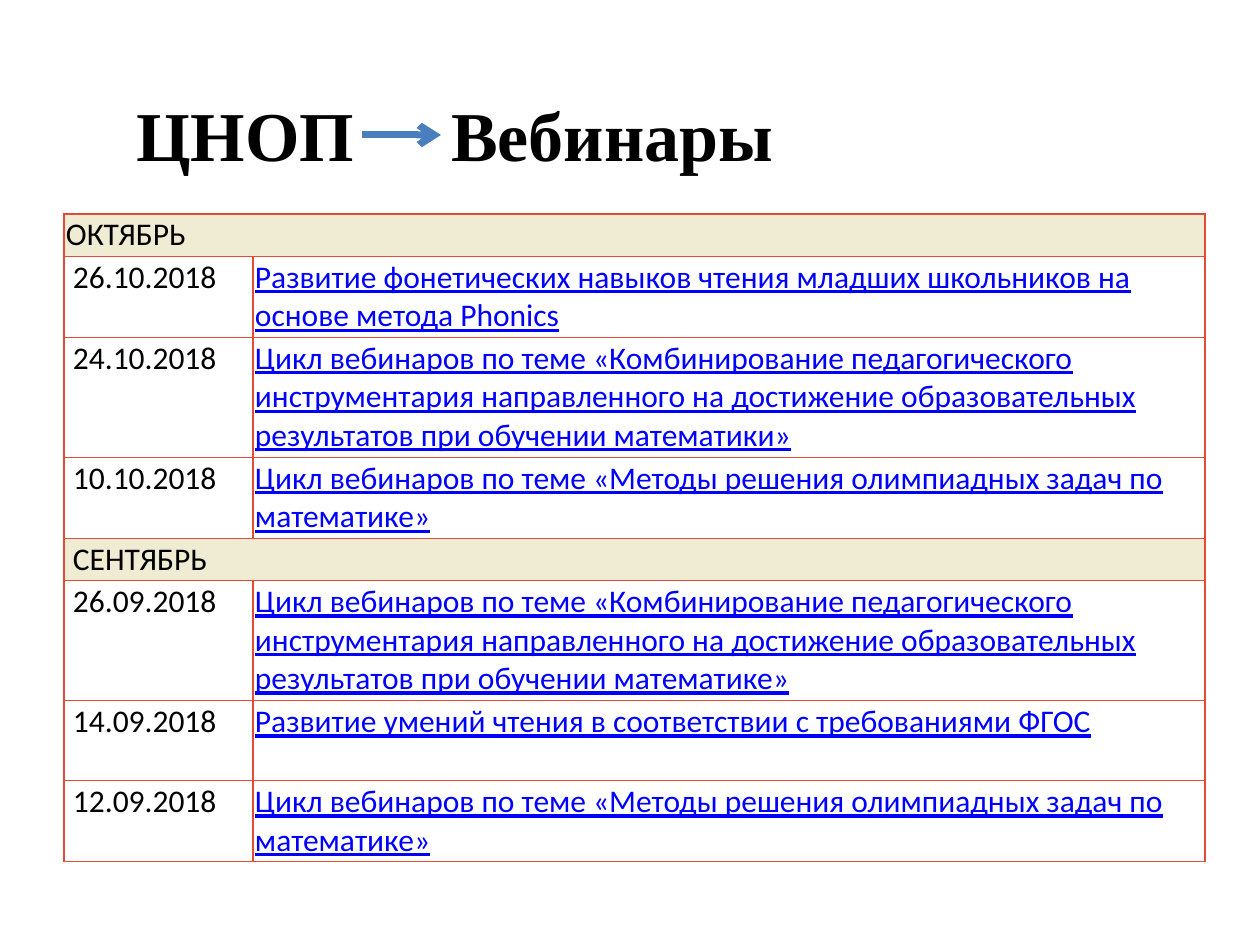
import pptx
import pptx.dml.color
import pptx.enum.shapes
import pptx.enum.text
import pptx.oxml
import pptx.oxml.ns
import pptx.util

RGBColor = pptx.dml.color.RGBColor
BLACK = RGBColor(0x00, 0x00, 0x00)
WHITE = RGBColor(0xFF, 0xFF, 0xFF)
LINK_BLUE = RGBColor(0x00, 0x00, 0xFF)
MONTH_FILL = RGBColor(0xF0, 0xEC, 0xD3)
BORDER_RED = RGBColor(0xE4, 0x4B, 0x36)
ARROW_BLUE = RGBColor(0x4B, 0x7E, 0xBC)

TITLE = ("ЦНОП", "Вебинары")
COMBINING = ("Цикл вебинаров по теме «Комбинирование педагогического инструментария "
             "направленного на достижение образовательных результатов при обучении ")
OLYMPIAD = "Цикл вебинаров по теме «Методы решения олимпиадных задач по математике»"

# Month, indent of its name, then webinars: date, topic, height in lines
MONTHS = [
    ("ОКТЯБРЬ", 2, [
        ("26.10.2018", "Развитие фонетических навыков чтения младших школьников "
                       "на основе метода Phonics", 2),
        ("24.10.2018", COMBINING + "математики»", 3),
        ("10.10.2018", OLYMPIAD, 2),
    ]),
    ("СЕНТЯБРЬ", 9, [
        ("26.09.2018", COMBINING + "математике»", 3),
        ("14.09.2018", "Развитие умений чтения в соответствии с требованиями ФГОС", 2),
        ("12.09.2018", OLYMPIAD, 2),
    ]),
]

TABLE_LEFT, TABLE_TOP = 64, 214
COLUMN_WIDTHS = (189, 952)
LINE_HEIGHT = 40
CELL_MARGIN, DATE_INDENT = 2, 9
TITLE_BOX = (124, 85, 669, 97)
TITLE_TAB = 315
ARROW_Y, ARROW_START, ARROW_END = 135, 362, 441

TITLE_FONT = {"name": "Times New Roman", "size": pptx.util.Pt(40), "bold": True}
CELL_FONT = {"name": "Calibri", "size": pptx.util.Pt(18), "bold": False}


def px(length):
    return round(length * 914400 / 126)


def format_font(font, colour, values):
    for name, value in values.items():
        setattr(font, name, value)
    font.color.rgb = colour


def add_borders(cell):
    properties = cell._tc.get_or_add_tcPr()
    for side in ("lnL", "lnR", "lnT", "lnB"):
        properties.append(pptx.oxml.parse_xml(
            f'<a:{side} {pptx.oxml.ns.nsdecls("a")} w="9525"><a:solidFill>'
            f'<a:srgbClr val="{BORDER_RED}"/></a:solidFill></a:{side}>'))


def fill_cell(cell, text, indent=CELL_MARGIN, colour=BLACK, underline=False):
    cell.margin_left = px(indent)
    run = cell.text_frame.paragraphs[0].add_run()
    run.text = text
    format_font(run.font, colour, {**CELL_FONT, "underline": underline})


def add_title(slide):
    frame = slide.shapes.add_textbox(*map(px, TITLE_BOX)).text_frame
    frame.word_wrap = True
    frame.auto_size = pptx.enum.text.MSO_AUTO_SIZE.SHAPE_TO_FIT_TEXT
    paragraph = frame.paragraphs[0]
    run = paragraph.add_run()
    run.text = "\t".join(TITLE)
    format_font(run.font, BLACK, TITLE_FONT)
    paragraph._p.get_or_add_pPr().append(pptx.oxml.parse_xml(
        f'<a:tabLst {pptx.oxml.ns.nsdecls("a")}>'
        f'<a:tab pos="{px(TITLE_TAB)}" algn="l"/></a:tabLst>'))


def add_arrow(slide):
    arrow = slide.shapes.add_connector(
        pptx.enum.shapes.MSO_CONNECTOR.STRAIGHT,
        px(ARROW_START), px(ARROW_Y), px(ARROW_END), px(ARROW_Y))
    arrow.line.color.rgb = ARROW_BLUE
    arrow.line.width = pptx.util.Pt(4)
    namespace = pptx.oxml.ns.nsdecls("a")
    arrow.line._get_or_add_ln().append(
        pptx.oxml.parse_xml(f'<a:tailEnd {namespace} type="arrow"/>'))
    arrow._element.spPr.append(pptx.oxml.parse_xml(f"<a:effectLst {namespace}/>"))


def add_webinars(slide):
    row_lines = [lines for _, _, webinars in MONTHS
                 for lines in [1] + [webinar[2] for webinar in webinars]]
    table = slide.shapes.add_table(
        len(row_lines), len(COLUMN_WIDTHS), px(TABLE_LEFT), px(TABLE_TOP),
        px(sum(COLUMN_WIDTHS)), px(sum(row_lines) * LINE_HEIGHT)).table
    table.first_row = table.horz_banding = False
    for column, width in zip(table.columns, COLUMN_WIDTHS):
        column.width = px(width)
    for row, lines in zip(table.rows, row_lines):
        row.height = px(lines * LINE_HEIGHT)
    for cell in table.iter_cells():
        for side in ("left", "right", "top", "bottom"):
            setattr(cell, f"margin_{side}", px(CELL_MARGIN))
        add_borders(cell)
        cell.fill.solid()
        cell.fill.fore_color.rgb = WHITE

    row = 0
    for month, indent, webinars in MONTHS:
        heading = table.cell(row, 0)
        heading.merge(table.cell(row, 1))
        heading.fill.fore_color.rgb = MONTH_FILL
        fill_cell(heading, month, indent)
        for row, (date, topic, _) in enumerate(webinars, row + 1):
            fill_cell(table.cell(row, 0), date, DATE_INDENT)
            fill_cell(table.cell(row, 1), topic, colour=LINK_BLUE, underline=True)
        row += 1


def main():
    presentation = pptx.Presentation()
    presentation.slide_width = px(1260)
    presentation.slide_height = px(945)
    slide = presentation.slides.add_slide(presentation.slide_layouts[6])
    add_webinars(slide)
    add_title(slide)
    add_arrow(slide)
    presentation.save("out.pptx")


if __name__ == "__main__":
    main()
